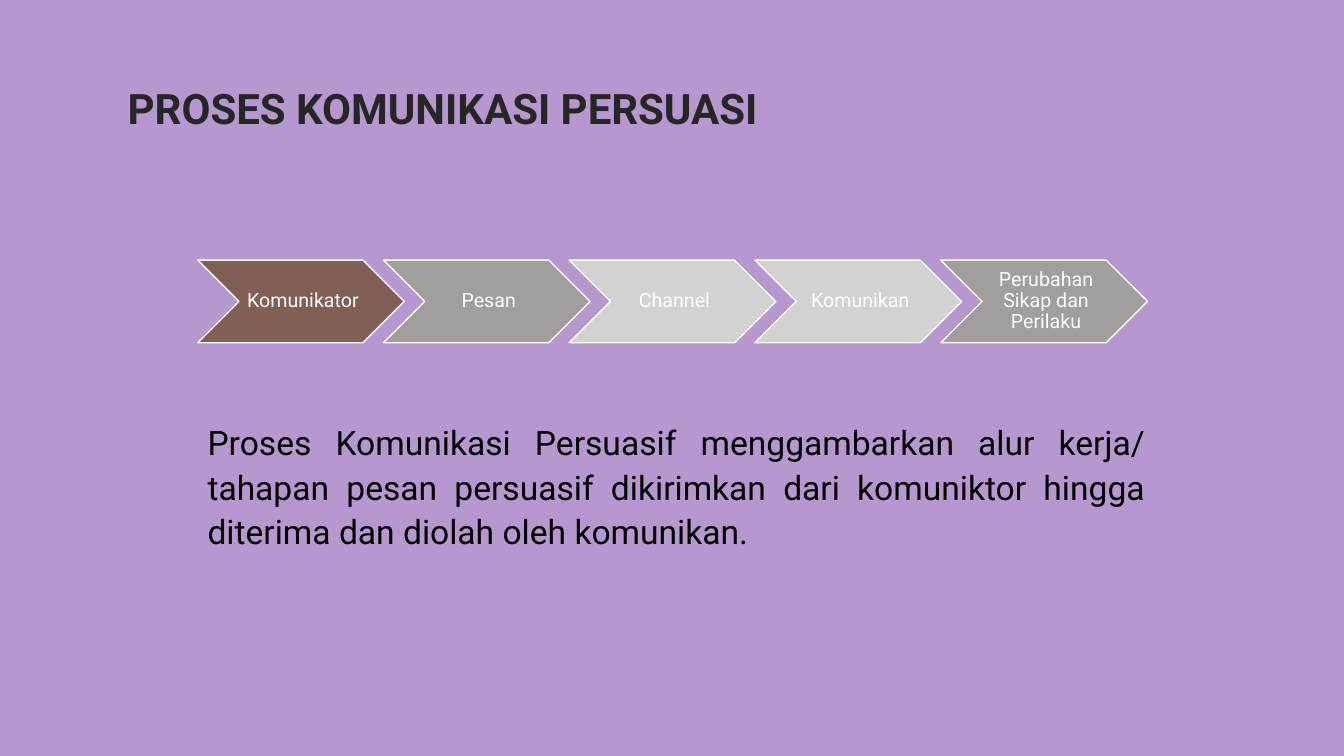
import dataclasses

import pptx
import pptx.dml.color
import pptx.enum.shapes
import pptx.enum.text
import pptx.util

Pt = pptx.util.Pt
Align = pptx.enum.text.PP_ALIGN
Anchor = pptx.enum.text.MSO_ANCHOR


@dataclasses.dataclass(frozen=True)
class Theme:
    font: str = "Roboto"
    back: str = "B797CF"
    title: str = "262626"
    body: str = "000000"
    white: str = "FFFFFF"
    brown: str = "815F55"
    gray: str = "A19E9C"
    pale: str = "D2D2D2"
    head_size: int = 30
    body_size: int = 24
    step_size: int = 14


THEME = Theme()
STEPS = [
    ("Komunikator", THEME.brown),
    ("Pesan", THEME.gray),
    ("Channel", THEME.pale),
    ("Komunikan", THEME.pale),
    ("Perubahan Sikap dan Perilaku", THEME.gray),
]


def rgb(code):
    return pptx.dml.color.RGBColor.from_string(code)


def apply(item, values):
    """Set each named attribute of item."""
    for name, value in values.items():
        setattr(item, name, value)


def place(shape, left, top, width, height):
    apply(shape, {"left": Pt(left), "top": Pt(top),
                  "width": Pt(width), "height": Pt(height)})


def write(shape, text, size, color, frame, para, bold=False):
    """Fill the shape with one formatted paragraph."""
    box = shape.text_frame
    box.text = text
    apply(box, {"word_wrap": True,
                "auto_size": pptx.enum.text.MSO_AUTO_SIZE.NONE, **frame})
    line = box.paragraphs[0]
    apply(line, para)
    font = line.runs[0].font
    apply(font, {"name": THEME.font, "size": Pt(size), "bold": bold})
    font.color.rgb = rgb(color)


def add_title(slide, text):
    title = slide.shapes.title
    place(title, 84, 49, 792, 61)
    write(title, text, THEME.head_size, THEME.title,
          {"vertical_anchor": Anchor.MIDDLE},
          {"alignment": Align.LEFT, "line_spacing": 0.9}, bold=True)


def add_step(slide, index, text, color):
    kind = pptx.enum.shapes.MSO_SHAPE.CHEVRON
    left = 141.2 + index * 132.7
    step = slide.shapes.add_shape(
        kind, Pt(left), Pt(185.8), Pt(147.6), Pt(59))
    step.shadow.inherit = False
    step.fill.solid()
    step.fill.fore_color.rgb = rgb(color)
    step.line.color.rgb = rgb(THEME.white)
    step.line.width = Pt(1)
    write(step, text, THEME.step_size, THEME.white,
          {"vertical_anchor": Anchor.MIDDLE, "margin_left": Pt(4.2),
           "margin_right": Pt(1.4), "margin_top": Pt(1.4),
           "margin_bottom": Pt(1.4)},
          {"alignment": Align.CENTER, "line_spacing": 0.9})


def add_body(slide, text):
    body = slide.shapes.add_textbox(Pt(141.2), Pt(295.2), Pt(684), Pt(66))
    write(body, text, THEME.body_size, THEME.body,
          {"vertical_anchor": Anchor.TOP},
          {"alignment": Align.JUSTIFY, "line_spacing": 1.1,
           "space_before": Pt(9)})


def main():
    deck = pptx.Presentation()
    apply(deck, {"slide_width": Pt(960), "slide_height": Pt(540)})
    slide = deck.slides.add_slide(deck.slide_layouts.get_by_name("Title Only"))
    slide.background.fill.solid()
    slide.background.fill.fore_color.rgb = rgb(THEME.back)
    add_title(slide, "PROSES KOMUNIKASI PERSUASI")
    for index, (text, color) in enumerate(STEPS):
        add_step(slide, index, text, color)
    add_body(slide, "Proses Komunikasi Persuasif menggambarkan alur kerja/ "
                    "tahapan pesan persuasif dikirimkan dari komuniktor "
                    "hingga diterima dan diolah oleh komunikan.")
    deck.save("out.pptx")


if __name__ == "__main__":
    main()
